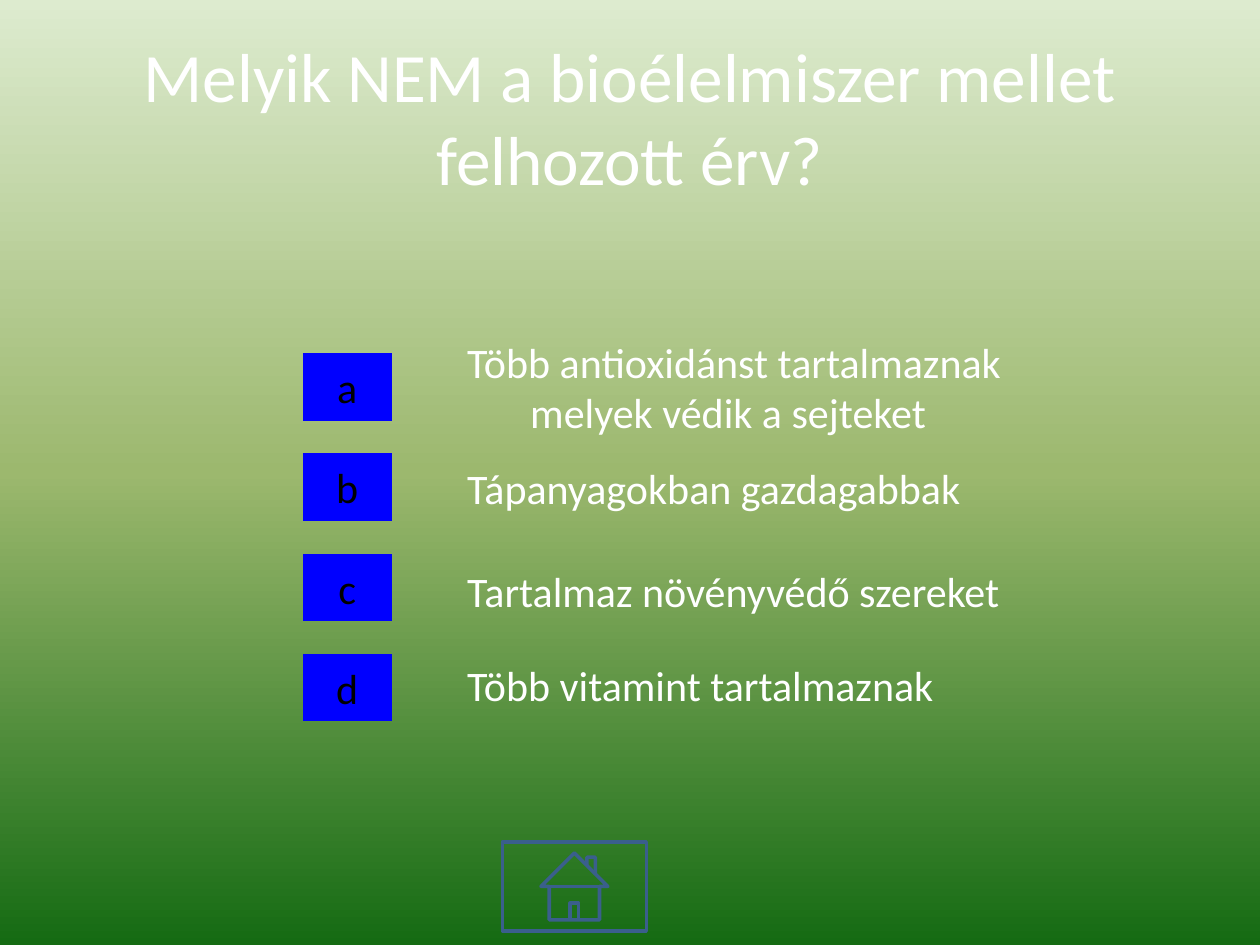
from copy import deepcopy

from pptx import Presentation
from pptx.dml.color import RGBColor
from pptx.enum.shapes import MSO_SHAPE
from pptx.enum.text import MSO_ANCHOR, MSO_AUTO_SIZE, PP_ALIGN
from pptx.oxml.ns import qn
from pptx.util import Cm, Pt

BUTTON = MSO_SHAPE.ACTION_BUTTON_CUSTOM
HOME = MSO_SHAPE.ACTION_BUTTON_HOME
MIDDLE = MSO_ANCHOR.MIDDLE
CENTER = PP_ALIGN.CENTER
NO_FIT = MSO_AUTO_SIZE.NONE

COLORS = {
    "top": "DDEBCF", "mid": "9CB86E", "bottom": "156B13",
    "text": "FFFFFF", "letter": "000000", "button": "0000FF", "home": "3A5F8C",
}


def rgb(name):
    return RGBColor.from_string(COLORS[name])


def style(p, size, color):
    p.font.name = "Calibri"
    p.font.size = Pt(size)
    p.font.color.rgb = rgb(color)


prs = Presentation()
prs.slide_width, prs.slide_height = Cm(25.4), Cm(19.05)
s = prs.slides.add_slide(prs.slide_layouts[5])

# Background: three-stop gradient from top to bottom
fill = s.background.fill
fill.gradient()
fill.gradient_angle = 270
stops = next(s.element.iter(qn("a:gsLst")))
stops.insert(1, deepcopy(stops[0]))
for stop, name, position in zip(fill.gradient_stops, ("top", "mid", "bottom"), (0, 0.5, 1)):
    stop.color.rgb = rgb(name)
    stop.position = position

# Title
title = s.shapes.title
title.left, title.top, title.width, title.height = Cm(1.27), Cm(0.76), Cm(22.86), Cm(3.18)
tf = title.text_frame
tf.text = "Melyik NEM a bioélelmiszer mellet felhozott érv?"
tf.auto_size = NO_FIT
tf.vertical_anchor = MIDDLE
tf.paragraphs[0].alignment = CENTER
style(tf.paragraphs[0], 39.6, "text")

# Answers: letter, text top, text width, text lines
answers = [
    ("a", 6.65, 12.85, ["Több antioxidánst tartalmaznak", "melyek védik a sejteket"]),
    ("b", 9.19, 11.84, ["Tápanyagokban gazdagabbak"]),
    ("c", 11.28, 13.21, ["Tartalmaz növényvédő szereket"]),
    ("d", 13.18, 11.28, ["Több vitamint tartalmaznak"]),
]
for i, (letter, top, width, lines) in enumerate(answers):
    sp = s.shapes.add_shape(BUTTON, Cm(6.1), Cm(7.12 + 2.02 * i), Cm(1.8), Cm(1.36))
    sp.shadow.inherit = False
    sp.fill.solid()
    sp.fill.fore_color.rgb = rgb("button")
    sp.line.fill.background()
    tf = sp.text_frame
    tf.text = letter
    tf.vertical_anchor = MIDDLE
    tf.paragraphs[0].alignment = CENTER
    style(tf.paragraphs[0], 24, "letter")

    box = s.shapes.add_textbox(Cm(7.9), Cm(top), Cm(width), Cm(1.27 * len(lines)))
    tf = box.text_frame
    tf.word_wrap = True
    tf.text = "\n".join(lines)
    for level, p in enumerate(tf.paragraphs, start=1):
        p.level = level
        style(p, 24, "text")

# Home button
home = s.shapes.add_shape(HOME, Cm(10.13), Cm(16.97), Cm(2.9), Cm(1.8))
home.shadow.inherit = False
home.fill.background()
home.line.color.rgb = rgb("home")
home.line.width = Pt(2)

prs.save("out.pptx")
